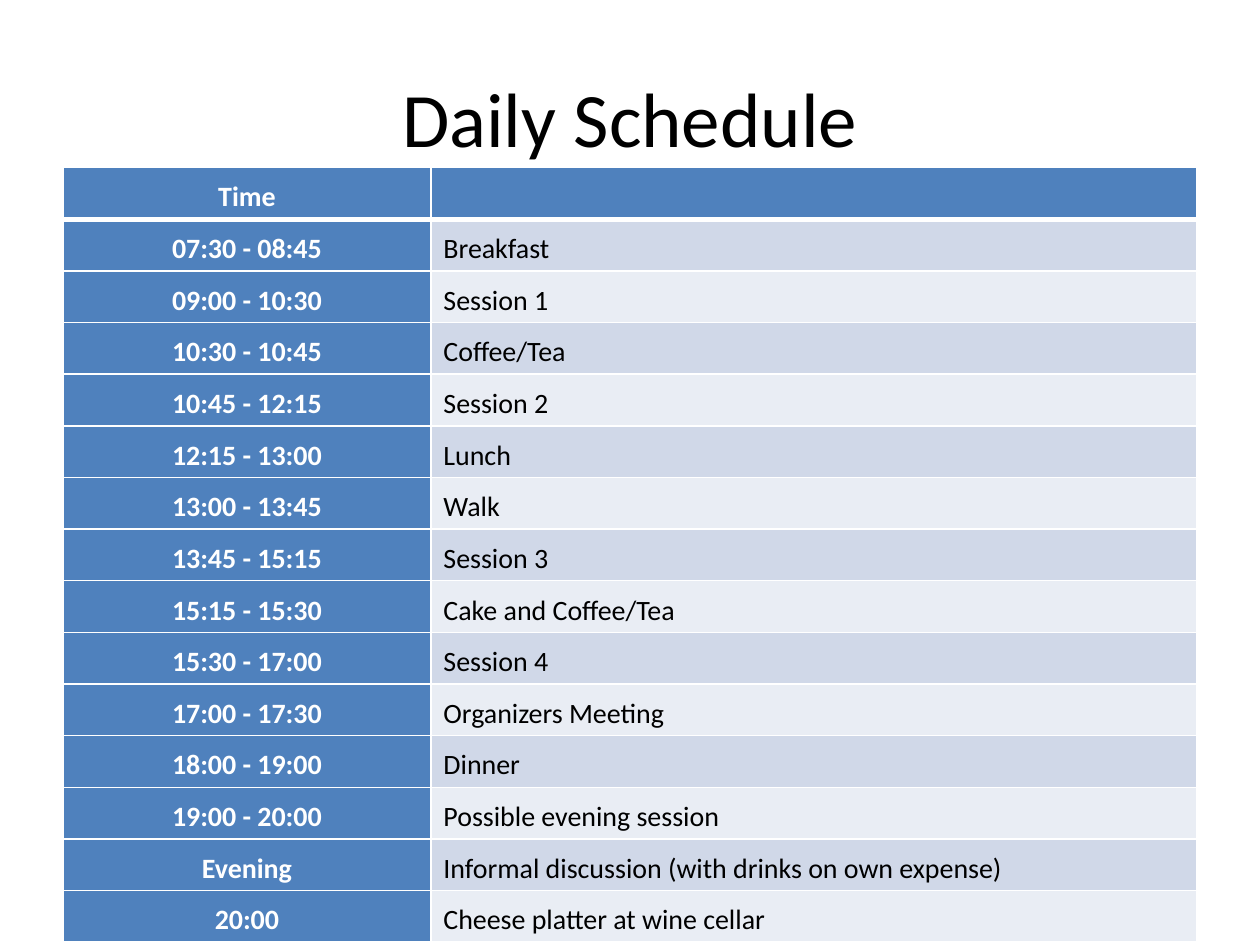
"""Build the daily schedule slide."""
from lxml.etree import SubElement
from pptx import Presentation
from pptx.dml.color import RGBColor
from pptx.enum.text import MSO_ANCHOR, PP_ALIGN
from pptx.oxml.ns import qn
from pptx.util import Inches, Pt

TITLE = "Daily Schedule"
SCHEDULE = [
    ("Time", ""),
    ("07:30 - 08:45", "Breakfast"),
    ("09:00 - 10:30", "Session 1"),
    ("10:30 - 10:45", "Coffee/Tea"),
    ("10:45 - 12:15", "Session 2"),
    ("12:15 - 13:00", "Lunch"),
    ("13:00 - 13:45", "Walk"),
    ("13:45 - 15:15", "Session 3"),
    ("15:15 - 15:30", "Cake and Coffee/Tea"),
    ("15:30 - 17:00", "Session 4"),
    ("17:00 - 17:30", "Organizers Meeting"),
    ("18:00 - 19:00", "Dinner"),
    ("19:00 - 20:00", "Possible evening session"),
    ("Evening", "Informal discussion (with drinks on own expense)"),
    ("20:00", "Cheese platter at wine cellar"),
]
COLUMN_WIDTHS = (2.92, 6.08)
ROW_HEIGHT = 0.41

FONT = "Calibri"
BLACK = RGBColor(0x00, 0x00, 0x00)
WHITE = RGBColor(0xFF, 0xFF, 0xFF)
BLUE = RGBColor(0x4F, 0x81, 0xBD)
DARK_BAND = RGBColor(0xD0, 0xD8, 0xE8)
LIGHT_BAND = RGBColor(0xE9, 0xED, 0xF4)


def add_span(para, text, size, color, bold=False):
    span = para.add_run()
    span.text = text
    span.font.name = FONT
    span.font.size = Pt(size)
    span.font.color.rgb = color
    span.font.bold = bold


def add_borders(cell, top, bottom):
    properties = cell._tc.get_or_add_tcPr()
    for side, width in (("L", 1), ("R", 1), ("T", top), ("B", bottom)):
        line = SubElement(properties, qn(f"a:ln{side}"), w=str(Pt(width)))
        fill = SubElement(line, qn("a:solidFill"))
        SubElement(fill, qn("a:srgbClr"), val=str(WHITE))


def fill_cell(cell, text, row, column):
    heading = row == 0 or column == 0
    add_borders(cell, 3 if row == 1 else 1, 3 if row == 0 else 1)
    cell.fill.solid()
    cell.fill.fore_color.rgb = BLUE if heading else DARK_BAND if row % 2 else LIGHT_BAND
    cell.margin_left = cell.margin_right = Inches(0.1)
    cell.margin_top, cell.margin_bottom = Inches(0.06), Inches(0.04)
    para = cell.text_frame.paragraphs[0]
    para.line_spacing = 1.15
    para.alignment = PP_ALIGN.LEFT if column else PP_ALIGN.CENTER
    if text:
        add_span(para, text, 16, WHITE if heading else BLACK, heading)


def add_title(page):
    box = page.shapes.add_textbox(Inches(0.5), Inches(0.3), Inches(9), Inches(1.25))
    frame = box.text_frame
    frame.word_wrap = True
    frame.vertical_anchor = MSO_ANCHOR.MIDDLE
    para = frame.paragraphs[0]
    para.alignment = PP_ALIGN.CENTER
    add_span(para, TITLE, 44, BLACK)


def add_schedule(page):
    table = page.shapes.add_table(
        len(SCHEDULE), len(COLUMN_WIDTHS), Inches(0.5), Inches(1.33),
        Inches(sum(COLUMN_WIDTHS)), Inches(ROW_HEIGHT * len(SCHEDULE))).table
    table.horz_banding = False
    for column, width in zip(table.columns, COLUMN_WIDTHS):
        column.width = Inches(width)
    for row, entry in enumerate(SCHEDULE):
        table.rows[row].height = Inches(ROW_HEIGHT)
        for column, text in enumerate(entry):
            fill_cell(table.cell(row, column), text, row, column)


def main():
    deck = Presentation()
    deck.slide_width, deck.slide_height = Inches(10), Inches(7.5)
    page = deck.slides.add_slide(deck.slide_layouts[6])
    add_title(page)
    add_schedule(page)
    deck.save("out.pptx")


if __name__ == "__main__":
    main()
